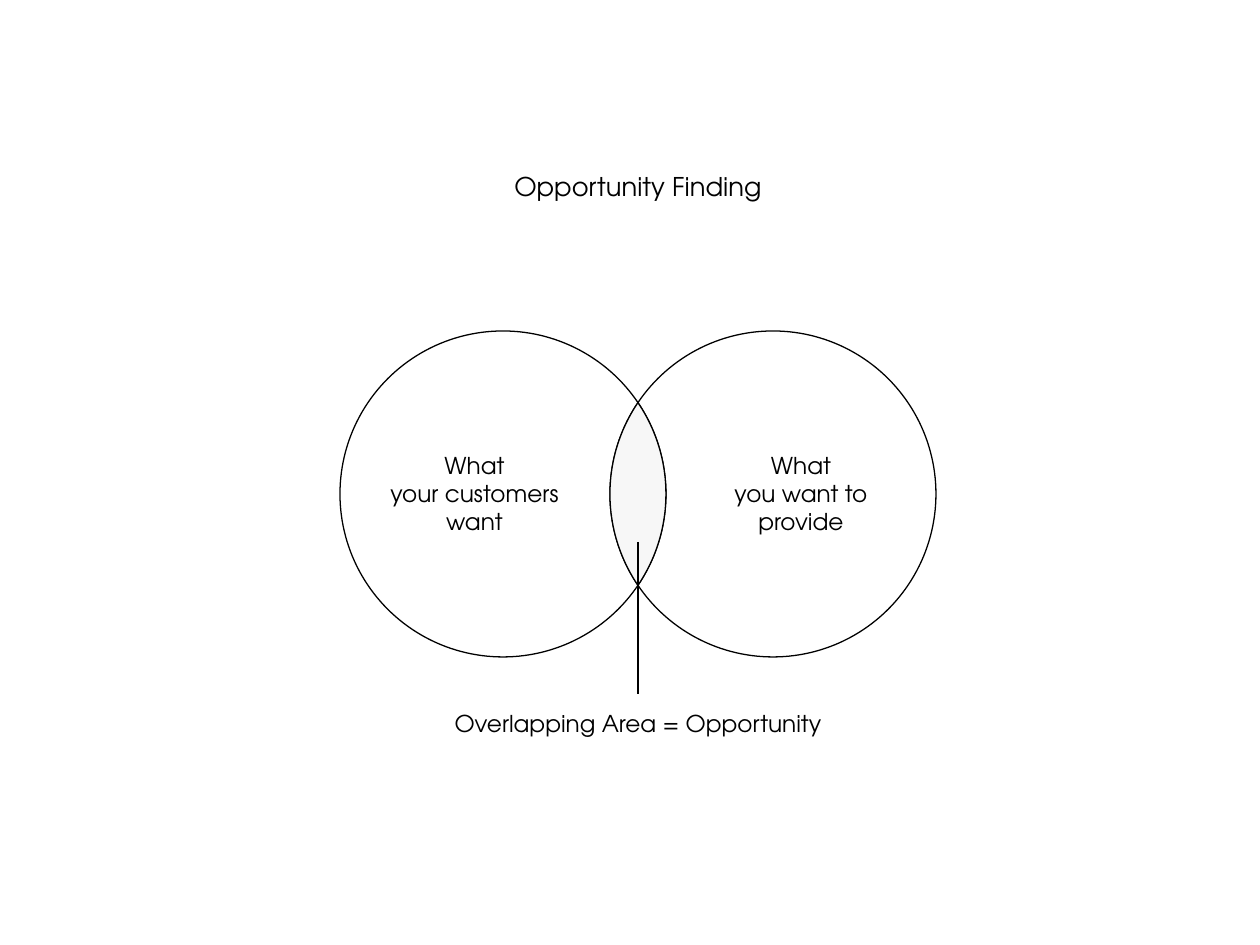
from math import acos, cos, pi, sin

from lxml import etree
from pptx import Presentation
from pptx.dml.color import RGBColor
from pptx.enum.shapes import MSO_CONNECTOR as CONN, MSO_SHAPE as SHAPE
from pptx.enum.text import MSO_AUTO_SIZE as AUTO, PP_ALIGN as ALIGN
from pptx.oxml.ns import qn
from pptx.util import Pt

EMU_PER_PX = 9864
BLACK, GREY = "000000", "F7F7F7"
FONT = "TeX Gyre Adventor"


def px(n):
    return round(n * EMU_PER_PX)


def color(value):
    return RGBColor.from_string(value)


def outline(sp, fill=None):
    """Give a shape a thin black line, and a fill if one is named."""
    sp.shadow.inherit = False
    sp.line.color.rgb = color(BLACK)
    sp.line.width = Pt(1)
    if fill:
        sp.fill.solid()
        sp.fill.fore_color.rgb = color(fill)
    else:
        sp.fill.background()


def add_text(slide, box, lines, size=18, wrap=False):
    tf = slide.shapes.add_textbox(*map(px, box)).text_frame
    tf.word_wrap = wrap
    tf.auto_size = AUTO.SHAPE_TO_FIT_TEXT
    for i, line in enumerate(lines):
        p = tf.paragraphs[0] if i == 0 else tf.add_paragraph()
        p.alignment = ALIGN.CENTER
        r = p.add_run()
        r.text = line
        for name, value in {"name": FONT, "size": Pt(size)}.items():
            setattr(r.font, name, value)
        r.font.color.rgb = color(BLACK)


def add_overlap(slide, center_x, center_y, radius, offset):
    """Fill the lens shared by two circles centred offset px either side."""
    half, steps = acos(offset / radius), 48
    points = []
    for side in (1, -1):
        for i in range(steps):
            angle = -half + 2 * half * i / steps + (pi if side < 0 else 0)
            points.append((px(center_x - side * offset + radius * cos(angle)),
                           px(center_y + radius * sin(angle))))
    builder = slide.shapes.build_freeform(*points[0], scale=1.0)
    builder.add_line_segments(points[1:], close=True)
    outline(builder.convert_to_shape(), GREY)


def add_pointer(slide, x, top, bottom):
    line = slide.shapes.add_connector(CONN.STRAIGHT, px(x), px(top), px(x), px(bottom))
    line.line.color.rgb = color(BLACK)
    line.line.width = Pt(1)
    etree.SubElement(line._element.spPr, qn("a:effectLst"))


def add_venn(slide, left, top, width, diameter):
    radius = diameter / 2
    center_x, center_y = left + width / 2, top + radius
    for x in (left, left + width - diameter):
        outline(slide.shapes.add_shape(SHAPE.OVAL, px(x), px(top), px(diameter), px(diameter)))
    for x, w, want in ((34, 201, "your customers want"), (348, 226, "you want to provide")):
        add_text(slide, (left + x, top + 116, w, 94), ["What", want], wrap=True)
    add_overlap(slide, center_x, center_y, radius, width / 2 - radius)
    add_pointer(slide, center_x, top + 211, top + 363)
    add_text(slide, (center_x - 193, top + 374, 386, 37), ["Overlapping Area = Opportunity"])


def main():
    prs = Presentation()
    prs.slide_width, prs.slide_height = px(1260), px(945)
    slide = prs.slides.add_slide(prs.slide_layouts[6])
    add_text(slide, (504, 166, 268, 41), ["Opportunity Finding"], size=20)
    add_venn(slide, 340, 331, 596, 326)
    prs.save("out.pptx")


if __name__ == "__main__":
    main()
